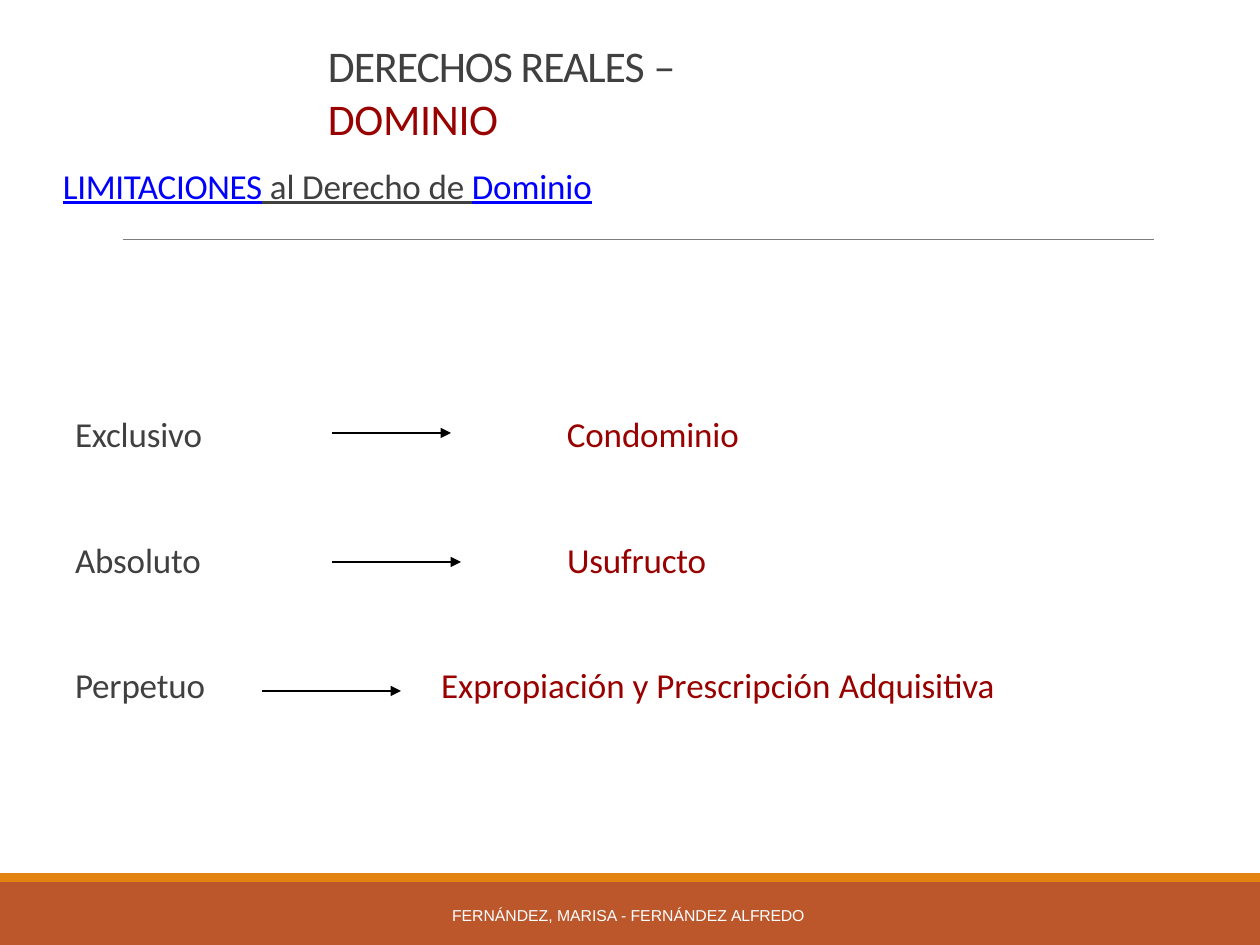
import pptx
import pptx.util
import pptx.dml.color
import pptx.enum.shapes
import pptx.enum.text
import pptx.oxml
import pptx.oxml.ns
from dataclasses import dataclass
from typing import Any

RGB = pptx.dml.color.RGBColor
GRAY = RGB(0x40, 0x40, 0x40)
RED = RGB(0x99, 0x00, 0x00)
BLUE = RGB(0x00, 0x00, 0xFF)
BLACK = RGB(0x00, 0x00, 0x00)
WHITE = RGB(0xFF, 0xFF, 0xFF)
RUST = RGB(0xBC, 0x57, 0x2C)
AMBER = RGB(0xE3, 0x83, 0x12)
RULE = RGB(0x7E, 0x7E, 0x7E)

WIDE, HIGH = 1260, 945
ROW_TOP, ROW_STEP, ROW_HIGH = 412, 125, 45
ARROW_TOP, ARROW_STEP = 433, 129


def px(count: int) -> int:
    return pptx.util.Emu(count * 914400 // 126)


@dataclass
class Box:
    left: int
    top: int
    width: int
    height: int

    def emu(self) -> list[int]:
        return [px(n) for n in (self.left, self.top, self.width, self.height)]


@dataclass
class Part:
    text: str
    color: Any
    gap: float = 0
    under: bool = False


@dataclass
class Row:
    trait: str
    trait_width: int
    start: int
    end: int
    limit: list[Part]
    limit_left: int
    limit_width: int


ROWS = [
    Row("Exclusivo", 132, 332, 451, [Part("Condominio", RED, -0.1)], 566, 176),
    Row("Absoluto", 131, 332, 461, [Part("Usufructo", RED, -0.1)], 566, 145),
    Row("Perpetuo", 135, 262, 401,
        [Part("Expropiación y Prescripción ", RED), Part("Adquisitiva", RED, -0.1)], 440, 558),
]


def write(shape: Any, parts: list[Part], size: int, face: str = "Calibri", wrap: bool = False) -> None:
    frame = shape.text_frame
    frame.auto_size = pptx.enum.text.MSO_AUTO_SIZE.NONE
    frame.word_wrap = wrap
    frame.vertical_anchor = pptx.enum.text.MSO_ANCHOR.TOP
    frame.margin_left = frame.margin_top = px(1)
    frame.margin_right = frame.margin_bottom = 0
    line = frame.paragraphs[0]
    line.alignment = pptx.enum.text.PP_ALIGN.LEFT
    line.space_before = pptx.util.Pt(1)
    for part in parts:
        run = line.add_run()
        run.text = part.text
        run.font.name = face
        run.font.size = pptx.util.Pt(size)
        run.font.color.rgb = part.color
        if part.under:
            run.font.underline = True
        if part.gap:
            run.font._element.set("spc", str(round(part.gap * 100)))


def label(slide: Any, box: Box, parts: list[Part], size: int = 20, face: str = "Calibri") -> None:
    write(slide.shapes.add_textbox(*box.emu()), parts, size, face)


def band(slide: Any, box: Box, color: Any) -> None:
    shape = slide.shapes.add_shape(pptx.enum.shapes.MSO_SHAPE.RECTANGLE, *box.emu())
    shape.shadow.inherit = False
    shape.fill.solid()
    shape.fill.fore_color.rgb = color
    shape.line.fill.background()


def stroke(slide: Any, start: int, end: int, top: int, color: Any, width: float, arrow: bool = False) -> None:
    kind = pptx.enum.shapes.MSO_CONNECTOR.STRAIGHT
    link = slide.shapes.add_connector(kind, px(start), px(top), px(end), px(top))
    link.line.color.rgb = color
    link.line.width = pptx.util.Pt(width)
    props = link._element.spPr
    if arrow:
        head = pptx.oxml.parse_xml(
            f'<a:tailEnd {pptx.oxml.ns.nsdecls("a")} type="triangle" w="med" len="med"/>')
        props.find(pptx.oxml.ns.qn("a:ln")).append(head)
    props.append(pptx.oxml.parse_xml(f'<a:effectLst {pptx.oxml.ns.nsdecls("a")}/>'))


def main() -> None:
    deck = pptx.Presentation()
    deck.slide_width, deck.slide_height = px(WIDE), px(HIGH)
    slide = deck.slides.add_slide(deck.slide_layouts[5])

    band(slide, Box(0, 882, WIDE, 63), RUST)
    band(slide, Box(0, 873, WIDE, 9), AMBER)
    stroke(slide, 123, 1154, 239, RULE, 0.5)

    title = slide.shapes.title
    title.left, title.top, title.width, title.height = Box(327, 38, 524, 55).emu()
    write(title, [Part("DERECHOS REALES ", GRAY, -0.6), Part("– ", GRAY),
                  Part("DOMINIO", RED, -0.2)], 25, wrap=True)

    label(slide, Box(62, 163, 539, 45), [
        Part("LIMITACIONES", BLUE, -0.2, True),
        Part(" al Derecho de ", GRAY, -0.1, True),
        Part("Dominio", BLUE, -0.1, True),
    ])

    for place, row in enumerate(ROWS):
        top = ROW_TOP + place * ROW_STEP
        label(slide, Box(74, top, row.trait_width, ROW_HIGH), [Part(row.trait, GRAY, -0.1)])
        label(slide, Box(row.limit_left, top, row.limit_width, ROW_HIGH), row.limit)
        stroke(slide, row.start, row.end, ARROW_TOP + place * ARROW_STEP, BLACK, 1, True)

    label(slide, Box(451, 905, 358, 21), [
        Part("FERNÁNDEZ, MARISA - FERNÁNDEZ ", WHITE), Part("ALFREDO", WHITE, -0.1),
    ], 9, "Arial")

    deck.save("out.pptx")


if __name__ == "__main__":
    main()
